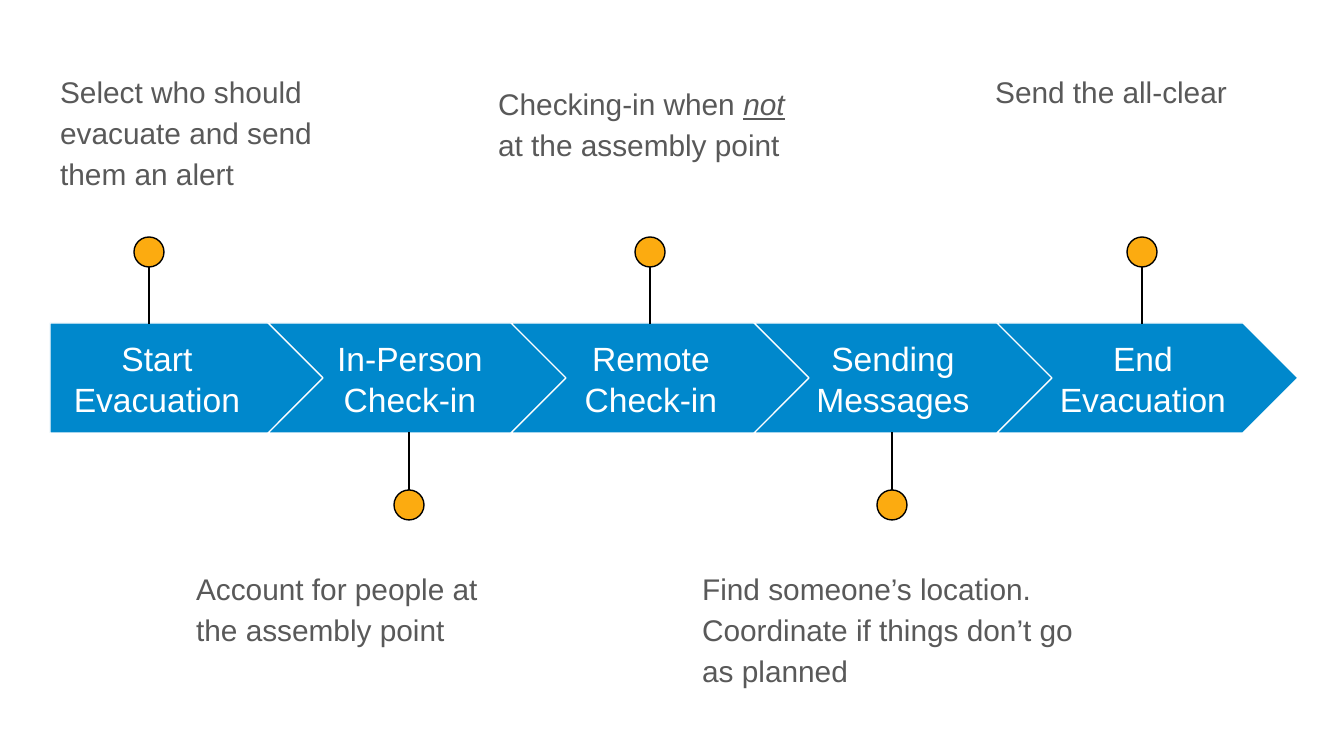
"""Build an evacuation timeline with five steps, pins and notes."""
from lxml import etree
from pptx import Presentation
from pptx import util as u
from pptx.dml.color import RGBColor
from pptx.enum import shapes as sh, text as tx
from pptx.oxml.ns import qn

HUES = {"blue": "0088CC", "gold": "FCAB10", "gray": "595959", "white": "FFFFFF", "black": "000000"}
TOP, MID = tx.MSO_ANCHOR.TOP, tx.MSO_ANCHOR.MIDDLE
# label lines, label (left, width), pin centre, note runs, note (left, width), note anchor
STEPS = [
    (["Start Evacuation"], (50, 214), 149,
     ["Select who should evacuate and send them an alert"], (47, 329), TOP),
    (["In-Person", "Check-in"], (313, 194), 409,
     ["Account for people at the assembly point"], (183, 329), TOP),
    (["Remote", "Check-in"], (554, 194), 650,
     ["Checking-in when ", "not ", "at the assembly point"], (485, 329), MID),
    (["Sending", "Messages"], (796, 194), 892,
     ["Find someone’s location. Coordinate if things don’t go as planned"], (689, 429), TOP),
    (["End Evacuation"], (1046, 194), 1142,
     ["Send the all-clear"], (982, 329), TOP),
]
BAND, TALL, PITCH, DOT = 323, 110, 243, 30
SCALE = 914400 / 134.4


def px(*nums):
    return [u.Emu(round(n * SCALE)) for n in nums]


def hue(name):
    return RGBColor.from_string(HUES[name])


def draw(slide, kind, box, fill, line):
    shape = slide.shapes.add_shape(kind, *px(*box))
    shape.shadow.inherit = False
    shape.fill.solid()
    shape.fill.fore_color.rgb = hue(fill)
    shape.line.color.rgb = hue(line)
    shape.line.width = u.Pt(0.75)


def write(slide, box, paras, size, color, anchor):
    frame = slide.shapes.add_textbox(*px(*box)).text_frame
    frame.word_wrap = True
    frame.vertical_anchor = anchor
    frame.margin_left = frame.margin_right = u.Inches(0.1)
    frame.margin_top = frame.margin_bottom = u.Inches(0.1)
    for i, runs in enumerate(paras):
        para = frame.add_paragraph() if i else frame.paragraphs[0]
        para.font.name, para.font.size = "Arial", u.Pt(size)
        para.font.color.rgb = hue(color)
        for words in runs:
            run = para.add_run()
            run.text = words
            if words == "not ":
                run.font.italic = run.font.underline = True
    return frame.paragraphs


def pin(slide, mid, above):
    start, end, top = (242, 324, 237) if above else (514, 432, 490)
    stem = slide.shapes.add_connector(sh.MSO_CONNECTOR.STRAIGHT, *px(mid, start, mid, end))
    stem.line.color.rgb = hue("black")
    stem.line.width = u.Pt(0.75)
    etree.SubElement(stem._element.spPr, qn("a:effectLst"))
    draw(slide, sh.MSO_SHAPE.OVAL, (mid - DOT / 2, top, DOT, DOT), "gold", "black")


def main():
    deck = Presentation()
    deck.slide_width, deck.slide_height = px(1344, 756)
    slide = deck.slides.add_slide(deck.slide_layouts[6])
    for i, (label, (left, wide), mid, note, (x, w), anchor) in enumerate(STEPS):
        above = i % 2 == 0
        kind = sh.MSO_SHAPE.CHEVRON if i else sh.MSO_SHAPE.PENTAGON
        span = (25 + PITCH * i, 301) if i else (50, 276)
        draw(slide, kind, (span[0], BAND, span[1], TALL), "blue", "white")
        for para in write(slide, (left, 344, wide, 69), [[s] for s in label], 18, "white", MID):
            para.alignment = tx.PP_ALIGN.CENTER
        pin(slide, mid, above)
        for para in write(slide, (x, 55 if above else 552, w, 133), [note], 16, "gray", anchor):
            para.line_spacing = 1.15
            para.space_after = u.Pt(16)
    deck.save("out.pptx")


if __name__ == "__main__":
    main()
